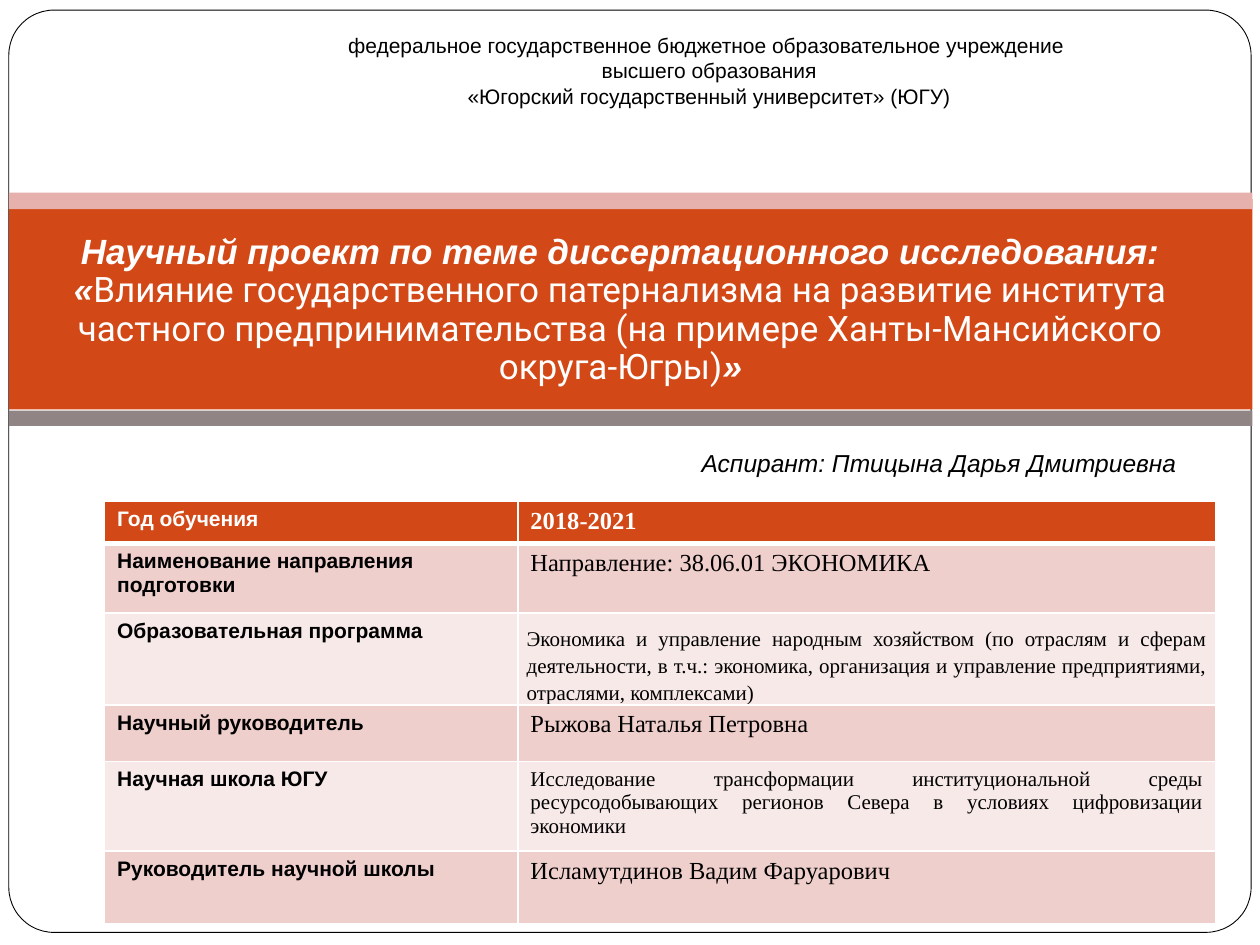
from dataclasses import dataclass

from lxml import etree
from pptx import Presentation
from pptx.dml.color import RGBColor
from pptx.enum.shapes import MSO_SHAPE
from pptx.enum.text import MSO_ANCHOR, PP_ALIGN
from pptx.oxml.ns import qn
from pptx.util import Inches, Pt

RECTANGLE, ROUNDED = MSO_SHAPE.RECTANGLE, MSO_SHAPE.ROUNDED_RECTANGLE
LEFT, CENTER, JUSTIFY = PP_ALIGN.LEFT, PP_ALIGN.CENTER, PP_ALIGN.JUSTIFY
TOP, MIDDLE, BOTTOM = MSO_ANCHOR.TOP, MSO_ANCHOR.MIDDLE, MSO_ANCHOR.BOTTOM
GRID_COLUMNS, GRID_ROWS = 100, 75


@dataclass(frozen=True)
class Theme:
    white: str = "FFFFFF"
    black: str = "000000"
    accent: str = "D34817"
    upper_strip: str = "E6B1AC"
    lower_strip: str = "918485"
    bands: tuple = ("EFCFCC", "F7E9E8")
    sans: str = "Arial"
    title_sans: str = "Roboto"
    serif: str = "Times New Roman"
    small: int = 12
    medium: int = 14
    large: int = 20


THEME = Theme()


class SlideBuilder:
    """Draws on one slide; boxes are left, top, width, height in grid cells."""

    def __init__(self, presentation, theme):
        self.theme = theme
        self.slide = presentation.slides.add_slide(presentation.slide_layouts[6])
        self.column = presentation.slide_width / GRID_COLUMNS
        self.row = presentation.slide_height / GRID_ROWS

    def place(self, box):
        steps = (self.column, self.row) * 2
        return [round(count * step) for count, step in zip(box, steps)]

    def panel(self, box, fill, kind=RECTANGLE, line=None, corner=None):
        shape = self.slide.shapes.add_shape(kind, *self.place(box))
        shape.shadow.inherit = False
        shape.fill.solid()
        shape.fill.fore_color.rgb = RGBColor.from_string(fill)
        if line:
            shape.line.color.rgb = RGBColor.from_string(line)
            shape.line.width = Pt(0.5)
        else:
            shape.line.fill.background()
        if corner:
            shape.adjustments[0] = corner

    def fill_text(self, frame, paragraphs, align=LEFT, spacing=None, **common):
        """Each paragraph is a list of (text, format) runs."""
        for index, runs in enumerate(paragraphs):
            paragraph = frame.paragraphs[0] if index == 0 else frame.add_paragraph()
            paragraph.alignment = align
            paragraph.line_spacing = spacing
            for text, own in runs:
                run = paragraph.add_run()
                run.text = text
                values = {"name": self.theme.sans, "size": self.theme.small,
                          "color": self.theme.black, "bold": False,
                          "italic": False, **common, **own}
                run.font.color.rgb = RGBColor.from_string(values.pop("color"))
                values["size"] = Pt(values["size"])
                for name, value in values.items():
                    setattr(run.font, name, value)

    def text(self, box, paragraphs, anchor=TOP, bottom=0.05, **style):
        frame = self.slide.shapes.add_textbox(*self.place(box)).text_frame
        frame.word_wrap = True
        frame.vertical_anchor = anchor
        frame.margin_bottom = Inches(bottom)
        self.fill_text(frame, paragraphs, **style)

    def border(self, cell, is_header):
        properties = cell._tc.get_or_add_tcPr()
        for side in ("L", "R", "T", "B"):
            width = 3 if is_header and side == "B" else 1
            line = etree.SubElement(properties, qn(f"a:ln{side}"), w=str(Pt(width)))
            fill = etree.SubElement(line, qn("a:solidFill"))
            etree.SubElement(fill, qn("a:srgbClr"), val=self.theme.white)

    def table(self, box, widths, heights, records):
        """Each record is a label, a value, its type size, cell format and spacing."""
        table = self.slide.shapes.add_table(
            len(heights), len(widths), *self.place(box)).table
        for column, width in zip(table.columns, widths):
            column.width = round(width * self.column)
        for row, height in zip(table.rows, heights):
            row.height = round(height * self.row)
        for index, (label, value, size, layout, spacing) in enumerate(records):
            is_header = index == 0
            fill = self.theme.accent if is_header else self.theme.bands[(index - 1) % 2]
            color = self.theme.white if is_header else self.theme.black
            label_cell, value_cell = table.rows[index].cells
            for cell in (label_cell, value_cell):
                self.border(cell, is_header)
                cell.fill.solid()
                cell.fill.fore_color.rgb = RGBColor.from_string(fill)
            for name, setting in layout.items():
                setattr(value_cell, name, setting)
            self.fill_text(label_cell.text_frame, [[(label, {})]], bold=True, color=color)
            self.fill_text(value_cell.text_frame, [[(value, {})]], align=JUSTIFY,
                           spacing=spacing, name=self.theme.serif, size=size,
                           bold=is_header, color=color)


def main():
    presentation = Presentation()
    presentation.slide_width, presentation.slide_height = Inches(10), Inches(7.5)
    builder = SlideBuilder(presentation, THEME)

    builder.panel((0.7, 0.8, 98.6, 73.2), THEME.white, ROUNDED, THEME.black, 0.049)
    for top, height, fill in ((15.8, 16.7, THEME.accent),
                              (15.3, 1.3, THEME.upper_strip),
                              (32.6, 1.2, THEME.lower_strip)):
        builder.panel((0.7, top, 98.7, height), fill)

    strong = {"bold": True, "italic": True}
    builder.text(
        (3.6, 17, 91.3, 15.7),
        [[("Научный проект по теме диссертационного исследования: «", strong),
          ("Влияние государственного патернализма на развитие института частного "
           "предпринимательства (на примере Ханты-Мансийского округа-Югры)",
           {"name": THEME.title_sans}),
          ("»", strong)]],
        anchor=MIDDLE, bottom=0.1, align=CENTER, spacing=Pt(22),
        size=THEME.large, color=THEME.white)
    builder.text((54.7, 35.1, 43.2, 3.4),
                 [[("Аспирант: Птицына Дарья Дмитриевна", {})]],
                 size=THEME.medium, italic=True)
    institution = ("федеральное государственное бюджетное образовательное учреждение ",
                   "высшего образования",
                   "«Югорский государственный университет» (ЮГУ)")
    builder.text((14.6, 2.1, 83.4, 7.1), [[(line, {})] for line in institution],
                 align=CENTER)

    program_layout = {"vertical_anchor": BOTTOM, "margin_left": Inches(0.07),
                      "margin_right": Inches(0.07), "margin_top": 0, "margin_bottom": 0}
    records = (
        ("Год обучения", "2018-2021", THEME.medium, {}, None),
        ("Наименование направления подготовки", "Направление: 38.06.01 ЭКОНОМИКА",
         THEME.medium, {}, None),
        ("Образовательная программа",
         "Экономика и управление народным хозяйством (по отраслям и сферам "
         "деятельности, в т.ч.: экономика, организация и управление предприятиями, "
         "отраслями, комплексами)", THEME.small, program_layout, 1.15),
        ("Научный руководитель", "Рыжова Наталья Петровна", THEME.medium, {}, None),
        ("Научная школа ЮГУ",
         "Исследование трансформации институциональной среды ресурсодобывающих "
         "регионов Севера в условиях цифровизации экономики", THEME.small, {}, None),
        ("Руководитель научной школы", "Исламутдинов Вадим Фаруарович",
         THEME.medium, {}, None),
    )
    builder.table((8.3, 39.8, 88.2, 33.5), (32.8, 55.4),
                  (3.3, 5.5, 7.3, 4.5, 7.1, 5.8), records)
    presentation.save("out.pptx")


if __name__ == "__main__":
    main()
